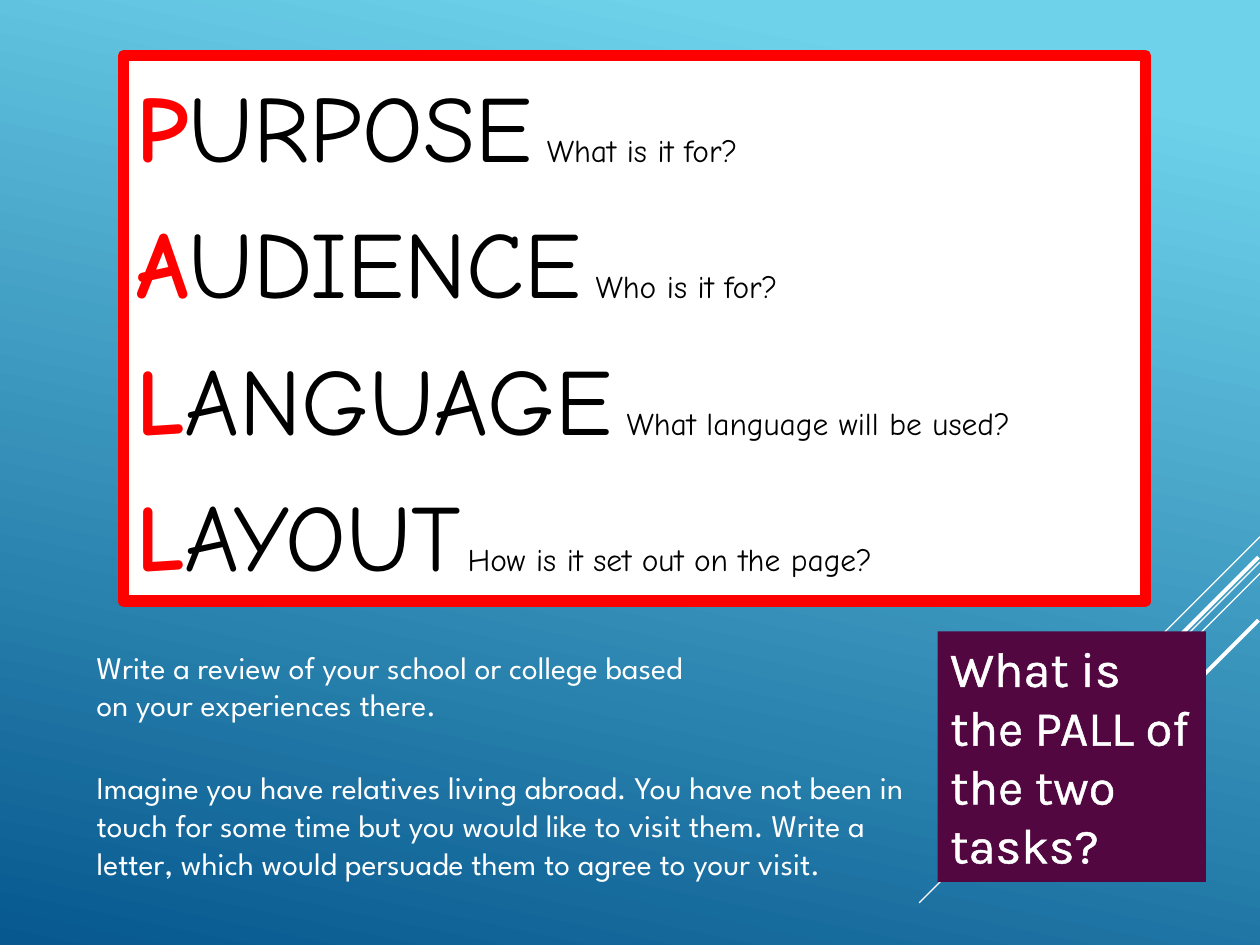
from typing import NamedTuple

from lxml.etree import SubElement
from pptx import Presentation
from pptx.dml.color import RGBColor
from pptx.enum.shapes import MSO_CONNECTOR
from pptx.enum.text import MSO_ANCHOR as Anchor, MSO_AUTO_SIZE as AutoSize, PP_ALIGN as Align
from pptx.oxml import parse_xml
from pptx.oxml.ns import nsdecls, qn
from pptx.util import Cm, Pt

COLORS = {
    "sky": "6ED2EB",
    "deep": "06588E",
    "white": "FFFFFF",
    "black": "000000",
    "red": "FF0000",
    "plum": "520741",
}


class Box(NamedTuple):
    left: float
    top: float
    width: float
    height: float


class Ray(NamedTuple):
    """A diagonal running down and left at 45 degrees."""
    x: float
    y: float
    run: float
    weight: float


class Term(NamedTuple):
    initial: str
    rest: str
    question: str
    gap_size: int = 24


class Task(NamedTuple):
    text: str
    box: Box
    anchor: Anchor


RAYS = [
    Ray(25.4, 10.82, 2.11, 0.75),
    Ray(25.4, 11.33, 6.87, 0.75),
    Ray(25.4, 11.56, 4.37, 0.75),
    Ray(25.37, 11.23, 3.99, 2.25),
    Ray(25.37, 12.5, 2.9, 2.25),
]
TERMS = [
    Term("P", "URPOSE", "What is it for?"),
    Term("A", "UDIENCE", "Who is it for?"),
    Term("L", "ANGUAGE", "What language will be used?"),
    Term("L", "AYOUT", "How is it set out on the page?", 11),
]
TASKS = [
    Task("Write a review of your school or college based on your experiences there.",
         Box(1.7, 12.93, 12.7, 1.8), Anchor.TOP),
    Task("Imagine you have relatives living abroad. You have not been in touch for "
         "some time but you would like to visit them. Write a letter, which would "
         "persuade them to agree to your visit.",
         Box(1.7, 15.34, 16.8, 2.57), Anchor.MIDDLE),
]
PALL_BOX = Box(2.49, 1.12, 20.6, 11)
PROMPT_BOX = Box(18.9, 12.73, 5.41, 5.05)


def rgb(name: str) -> RGBColor:
    return RGBColor.from_string(COLORS[name])


def add_run(p, text: str, *, size: float, font: str, color: str = "white", bold: bool = False):
    r = p.add_run()
    r.text = text
    r.font.size, r.font.name, r.font.bold = Pt(size), font, bold
    r.font.color.rgb = rgb(color)
    return r


def place(sp, box: Box) -> None:
    sp.left, sp.top, sp.width, sp.height = map(Cm, box)


def set_frame(sp, anchor: Anchor = Anchor.TOP):
    tf = sp.text_frame
    tf.word_wrap = True
    tf.auto_size = AutoSize.NONE
    tf.vertical_anchor = anchor
    return tf


def plain_paragraph(p, after: float = 0):
    """Clear the template's bullet, indent and spacing."""
    p.alignment = Align.LEFT
    p.space_before, p.space_after = Pt(0), Pt(after)
    pPr = p._p.get_or_add_pPr()
    pPr.set("marL", "0")
    pPr.set("indent", "0")
    SubElement(pPr, qn("a:buNone"))
    return p


def paint_background(s) -> None:
    fill = s.background.fill
    fill.gradient()
    fill.gradient_angle = 360 - 102
    for stop, name, position in zip(fill.gradient_stops, ("sky", "deep"), (0.1, 1)):
        stop.color.rgb = rgb(name)
        stop.position = position


def add_ray(s, ray: Ray) -> None:
    line = s.shapes.add_connector(MSO_CONNECTOR.STRAIGHT, Cm(ray.x), Cm(ray.y),
                                  Cm(ray.x - ray.run), Cm(ray.y + ray.run))
    line.line.color.rgb = rgb("white")
    line.line.width = Pt(ray.weight)
    SubElement(line._element.spPr, qn("a:effectLst"))


def fill_pall(sp) -> None:
    place(sp, PALL_BOX)
    sp.fill.solid()
    sp.fill.fore_color.rgb = rgb("white")
    sp.line.color.rgb = rgb("red")
    sp.line.width = Pt(6.5)
    tf = set_frame(sp)
    for i, term in enumerate(TERMS):
        p = plain_paragraph(tf.add_paragraph() if i else tf.paragraphs[0], after=10)
        p.line_spacing = 1.05
        for text, size, color in ((term.initial, 54, "red"), (term.rest, 54, "black"),
                                  (" ", term.gap_size, "black"), (term.question, 18, "black")):
            add_run(p, text, size=size, font="Comic Neue", color=color, bold=color == "red")


def fill_prompt(sp) -> None:
    place(sp, PROMPT_BOX)
    sp.fill.solid()
    sp.fill.fore_color.rgb = rgb("plum")
    p = plain_paragraph(set_frame(sp).paragraphs[0])
    r = add_run(p, "What is the PALL of the two tasks?", size=28, font="Karla")
    outline = parse_xml(f'<a:ln {nsdecls("a")} w="{Pt(1.45)}"><a:solidFill>'
                        f'<a:srgbClr val="{COLORS["white"]}"/></a:solidFill></a:ln>')
    r.font._element.insert(0, outline)


def add_task(s, task: Task) -> None:
    sp = s.shapes.add_textbox(*map(Cm, task.box))
    p = set_frame(sp, task.anchor).paragraphs[0]
    add_run(p, task.text, size=18, font="League Spartan")


def main() -> None:
    prs = Presentation()
    prs.slide_width, prs.slide_height = Cm(25.4), Cm(19.05)
    s = prs.slides.add_slide(prs.slide_layouts[1])
    prompt, pall = s.shapes.title, s.placeholders[1]
    paint_background(s)
    for ray in RAYS:
        add_ray(s, ray)
    fill_pall(pall)
    for task in TASKS:
        add_task(s, task)
    fill_prompt(prompt)
    # Bring the panels in front of the rays
    for sp in (pall, prompt):
        s.shapes._spTree.append(sp._element)
    prs.save("out.pptx")


if __name__ == "__main__":
    main()
